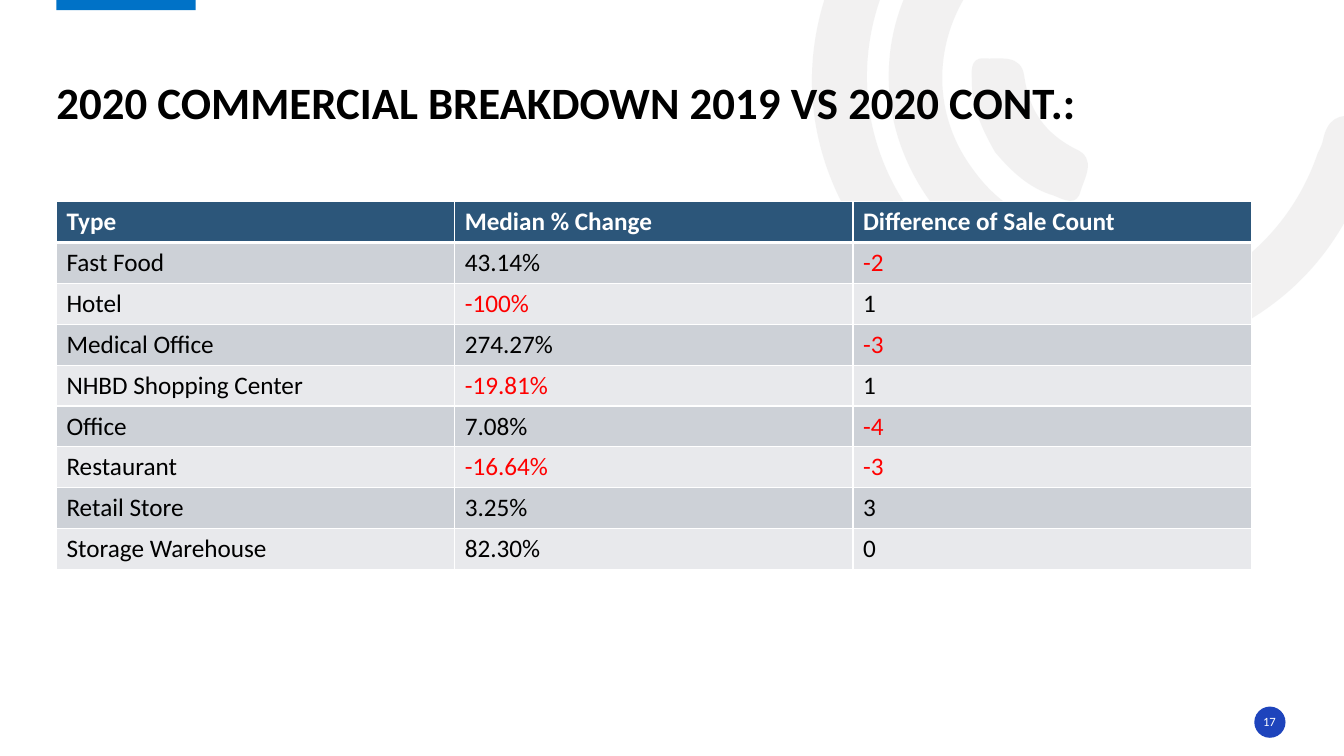
from pptx import Presentation
from pptx.dml.color import RGBColor
from pptx.enum.shapes import MSO_SHAPE
from pptx.enum.text import MSO_ANCHOR, MSO_AUTO_SIZE, PP_ALIGN
from pptx.oxml import parse_xml
from pptx.oxml.ns import nsdecls, qn
from pptx.util import Inches, Pt
from lxml.etree import SubElement

TITLE = "2020 COMMERCIAL BREAKDOWN 2019 VS 2020 CONT.:"
PAGE = "17"
ROWS = [
    ("Type", "Median % Change", "Difference of Sale Count"),
    ("Fast Food", "43.14%", "-2"),
    ("Hotel", "-100%", "1"),
    ("Medical Office", "274.27%", "-3"),
    ("NHBD Shopping Center", "-19.81%", "1"),
    ("Office", "7.08%", "-4"),
    ("Restaurant", "-16.64%", "-3"),
    ("Retail Store", "3.25%", "3"),
    ("Storage Warehouse", "82.30%", "0"),
]
COLORS = {
    "header": "2C567A", "odd": "CDD1D7", "even": "E8E9EC",
    "text": "000000", "negative": "FF0000", "white": "FFFFFF",
    "tab": "0072C7", "badge": "1E44BC", "arc": "E7E6E6",
}
FONT = "Calibri"
LEFT = 0.56
TITLE_BOX = (LEFT, 0.27, 12.19, 1.01)
TABLE_BOX = (LEFT, 2, 11.85, 3.65)
TAB_BOX = (LEFT, -0.02, 1.38, 0.12)
BADGE_BOX = (12.44, 7.01, 0.31, 0.31)
PAGE_BOX = (12.43, 7.06, 0.32, 0.2)
ARC_OPACITY = 53
ARCS = [
    [(8.51, 2.29),
     (7.99, 1.49), (7.87, 0.5), (8.38, -0.5),
     (8.9, -1.52), (9.76, -2.03), (10.9, -2.07),
     (11.05, -2.07), (11.21, -2.1), (11.31, -1.95),
     (11.44, -1.75), (11.27, -1.54), (10.98, -1.54),
     (9.67, -1.54), (8.65, -0.59), (8.6, 0.68),
     (8.56, 1.81), (9.36, 2.81), (10.46, 3.02),
     (11.6, 3.24), (12.7, 2.61), (13.07, 1.52),
     (13.09, 1.48), (13.11, 1.44), (13.12, 1.4),
     (13.16, 1.19), (13.27, 1.11), (13.49, 1.17),
     (13.73, 1.24), (13.67, 1.41), (13.61, 1.56),
     (13.34, 2.45), (12.78, 3.07), (11.91, 3.41),
     (10.7, 3.87), (9.36, 3.45), (8.51, 2.29)],
    [(9.22, 1.99),
     (8.62, 1.15), (8.69, 0.07), (9.4, -0.68),
     (9.51, -0.79), (9.62, -0.95), (9.8, -0.78),
     (9.95, -0.64), (9.97, -0.5), (9.79, -0.32),
     (9.25, 0.26), (9.2, 1.08), (9.65, 1.68),
     (10.08, 2.29), (10.88, 2.49), (11.61, 2.15),
     (11.82, 2.05), (11.93, 2.12), (12.03, 2.29),
     (12.13, 2.5), (11.97, 2.56), (11.83, 2.63),
     (10.96, 3.1), (9.83, 2.82), (9.22, 1.99)],
    [(9.87, 1.51),
     (9.75, 1.3), (9.64, 1.07), (9.64, 0.82),
     (9.64, 0.73), (9.61, 0.57), (9.76, 0.58),
     (9.92, 0.59), (10.13, 0.53), (10.16, 0.76),
     (10.21, 1.1), (10.36, 1.32), (10.67, 1.48),
     (10.88, 1.57), (10.76, 1.76), (10.72, 1.89),
     (10.68, 2.06), (10.55, 1.98), (10.45, 1.94),
     (10.21, 1.87), (10.03, 1.7), (9.87, 1.51)],
]


def rgb(name):
    return RGBColor.from_string(COLORS[name])


def paint(sp, color):
    sp.shadow.inherit = False
    sp.fill.solid()
    sp.fill.fore_color.rgb = rgb(color)
    sp.line.fill.background()


def style(p, size, color, bold=False):
    p.font.name = FONT
    p.font.size = Pt(size)
    p.font.bold = bold
    p.font.color.rgb = rgb(color)


def set_text(tf, text, anchor, align):
    tf.text = text
    tf.word_wrap = True
    tf.auto_size = MSO_AUTO_SIZE.NONE
    tf.vertical_anchor = anchor
    tf.margin_left = tf.margin_right = tf.margin_top = tf.margin_bottom = 0
    p = tf.paragraphs[0]
    p.alignment = align
    return p


def lines_to_curves(sp):
    lines = list(sp.element.spPr.iter(qn("a:lnTo")))
    for i in range(0, len(lines) - 2, 3):
        curve = parse_xml(f'<a:cubicBezTo {nsdecls("a")}/>')
        lines[i].addprevious(curve)
        for line in lines[i:i + 3]:
            curve.append(line[0])
            line.getparent().remove(line)


def add_arc(shapes, points):
    start, *rest = [(Inches(x), Inches(y)) for x, y in points]
    builder = shapes.build_freeform(*start)
    builder.add_line_segments(rest, close=True)
    sp = builder.convert_to_shape()
    lines_to_curves(sp)
    paint(sp, "arc")
    color = sp.element.spPr.find(qn("a:solidFill"))[0]
    SubElement(color, qn("a:alpha")).set("val", str(ARC_OPACITY * 1000))


def set_borders(cell, row):
    widths = {"L": 1, "R": 1, "T": 3 if row == 1 else 1, "B": 3 if row == 0 else 1}
    tc_pr = cell._tc.get_or_add_tcPr()
    for side, width in widths.items():
        tc_pr.append(parse_xml(
            f'<a:ln{side} {nsdecls("a")} w="{Pt(width)}"><a:solidFill>'
            f'<a:srgbClr val="{COLORS["white"]}"/></a:solidFill></a:ln{side}>'))


def add_sales_table(shapes):
    table = shapes.add_table(len(ROWS), len(ROWS[0]), *map(Inches, TABLE_BOX)).table
    for i, values in enumerate(ROWS):
        for j, value in enumerate(values):
            cell = table.cell(i, j)
            set_borders(cell, i)
            cell.fill.solid()
            cell.fill.fore_color.rgb = rgb("header" if i == 0 else "odd" if i % 2 else "even")
            cell.text = value
            color = "white" if i == 0 else "negative" if value.startswith("-") else "text"
            style(cell.text_frame.paragraphs[0], 18, color, bold=i == 0)


def add_title(title):
    title.left, title.top, title.width, title.height = map(Inches, TITLE_BOX)
    p = set_text(title.text_frame, TITLE, MSO_ANCHOR.BOTTOM, PP_ALIGN.LEFT)
    p.line_spacing = 0.9
    style(p, 32, "text", bold=True)
    title.element.getparent().append(title.element)


def add_page_number(shapes):
    paint(shapes.add_shape(MSO_SHAPE.OVAL, *map(Inches, BADGE_BOX)), "badge")
    box = shapes.add_textbox(*map(Inches, PAGE_BOX))
    p = set_text(box.text_frame, PAGE, MSO_ANCHOR.MIDDLE, PP_ALIGN.CENTER)
    style(p, 9, "white")


def main():
    prs = Presentation()
    prs.slide_width, prs.slide_height = Inches(13.33), Inches(7.5)
    shapes = prs.slides.add_slide(prs.slide_layouts[5]).shapes
    for points in ARCS:
        add_arc(shapes, points)
    paint(shapes.add_shape(MSO_SHAPE.RECTANGLE, *map(Inches, TAB_BOX)), "tab")
    add_page_number(shapes)
    add_sales_table(shapes)
    add_title(shapes.title)
    prs.save("out.pptx")


if __name__ == "__main__":
    main()
